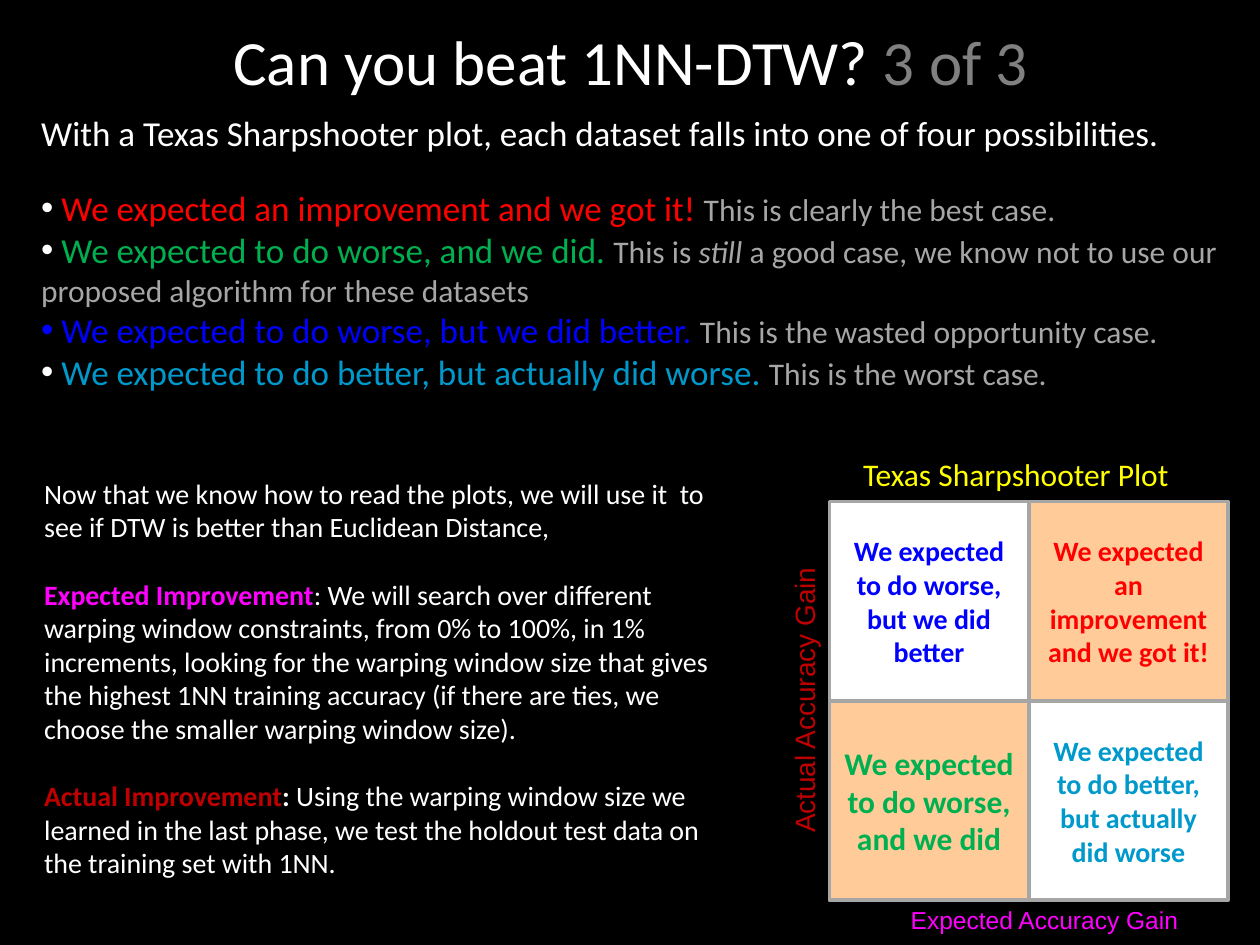
import pptx
import pptx.util
import pptx.dml.color
import pptx.enum.shapes
import pptx.enum.text
import pptx.oxml.ns
from lxml import etree

Cm = pptx.util.Cm
Pt = pptx.util.Pt
ALIGN = pptx.enum.text.PP_ALIGN
ANCHOR = pptx.enum.text.MSO_ANCHOR

WHITE, GRAY, RED, GREEN = "FFFFFF", "A6A6A6", "FF0000", "00B050"
BLUE, TEAL, MAGENTA, DARK_RED = "0000FF", "0099CC", "FF00FF", "C00000"
PEACH = "FFCC99"


def rgb(value):
    return pptx.dml.color.RGBColor.from_string(value)


def add_span(para, text, size=16, color=WHITE, font="Calibri", bold=False, italic=False):
    span = para.add_run()
    span.text = text
    span.font.size = Pt(size)
    span.font.name = font
    span.font.bold = bold
    span.font.italic = italic
    span.font.color.rgb = rgb(color)


def add_bullet(para):
    properties = para._p.get_or_add_pPr()
    properties.set("marL", "0")
    properties.set("indent", "0")
    font = etree.SubElement(properties, pptx.oxml.ns.qn("a:buFont"))
    font.set("typeface", "Arial")
    etree.SubElement(properties, pptx.oxml.ns.qn("a:buChar")).set("char", "•")


class SlideBuilder:
    """Holds the current page and the shared style of its elements."""

    border_color = GRAY
    border_width = Pt(2)

    def __init__(self, deck):
        self.page = deck.slides.add_slide(deck.slide_layouts[5])
        fill = self.page.background.fill
        fill.solid()
        fill.fore_color.rgb = rgb("000000")

    def title(self, spans, left, top, width, height):
        box = self.page.shapes.title
        box.left, box.top, box.width, box.height = map(Cm, (left, top, width, height))
        frame = box.text_frame
        frame.vertical_anchor = ANCHOR.MIDDLE
        para = frame.paragraphs[0]
        para.alignment = ALIGN.CENTER
        for text, color in spans:
            add_span(para, text, size=36, color=color)

    def text(self, paragraphs, left, top, width, height):
        """Each paragraph is (space before, has bullet, spans)."""
        box = self.page.shapes.add_textbox(*map(Cm, (left, top, width, height)))
        frame = box.text_frame
        frame.word_wrap = True
        for index, (gap, bullet, spans) in enumerate(paragraphs):
            para = frame.add_paragraph() if index else frame.paragraphs[0]
            para.space_before = Pt(gap)
            if bullet:
                add_bullet(para)
            for text, style in spans:
                add_span(para, text, **style)

    def label(self, text, left, top, width, height, inset=0, rotation=0, **style):
        box = self.page.shapes.add_textbox(*map(Cm, (left, top, width, height)))
        box.rotation = rotation
        frame = box.text_frame
        frame.word_wrap = False
        frame.margin_left = frame.margin_right = Cm(inset)
        frame.margin_top = frame.margin_bottom = Cm(inset / 2)
        add_span(frame.paragraphs[0], text, **style)

    def square(self, left, top, side, fill=None):
        box = self.page.shapes.add_shape(
            pptx.enum.shapes.MSO_SHAPE.RECTANGLE, *map(Cm, (left, top, side, side)))
        box.shadow.inherit = False
        box.line.fill.background()
        if fill:
            box.fill.solid()
            box.fill.fore_color.rgb = rgb(fill)
        else:
            box.fill.background()
        return box

    def cell(self, text, left, top, side, fill, **style):
        box = self.square(left, top, side, fill)
        box.line.color.rgb = rgb(self.border_color)
        box.line.width = self.border_width
        frame = box.text_frame
        frame.word_wrap = True
        frame.vertical_anchor = ANCHOR.MIDDLE
        para = frame.paragraphs[0]
        para.alignment = ALIGN.CENTER
        add_span(para, text, bold=True, **style)


def main():
    deck = pptx.Presentation()
    deck.slide_width, deck.slide_height = Cm(25.4), Cm(19.05)
    builder = SlideBuilder(deck)

    # Title
    builder.title([("Can you beat 1NN-DTW? ", WHITE), ("3 of 3", "808080")],
                  0.43, 0, 24.56, 2.44)

    # White ground of the plot
    left, top, side = 16.72, 10.11, 4.02
    builder.square(left, top, 2 * side, WHITE)

    # The four possibilities
    large, remark = {"size": 20}, {"size": 18, "color": GRAY}
    cases = [
        (WHITE, RED, "We expected an improvement and we got it! ",
         [("This is clearly the best case.", remark)]),
        (WHITE, GREEN, "We expected to do worse, and we did. ",
         [("This is ", remark), ("still", {**remark, "italic": True}),
          (" a good case, we know not to use our proposed algorithm for these datasets",
           remark)]),
        (BLUE, BLUE, "We expected to do worse, but we did better. ",
         [("This is the wasted opportunity case.", remark)]),
        (WHITE, TEAL, "We expected to do better, but actually did worse. ",
         [("This is the worst case.", remark)]),
    ]
    paragraphs = [(0, False, [(
        "With a Texas Sharpshooter plot, each dataset falls into one of four possibilities.",
        large)])]
    for index, (bullet_color, color, outcome, remarks) in enumerate(cases):
        spans = [(" ", {"size": 20, "color": bullet_color}),
                 (outcome, {"size": 20, "color": color})]
        paragraphs.append((0 if index else 19.2, True, spans + remarks))
    builder.text(paragraphs, 0.58, 2.12, 24.82, 8.71)

    # Sharpshooter plot: two by two cells
    cells = [
        ("We expected to do worse, but we did better", None, BLUE, 16),
        ("We expected an improvement and we got it!", PEACH, RED, 16),
        ("We expected to do worse, and we did", PEACH, GREEN, 18),
        ("We expected to do better, but actually did worse", None, TEAL, 16),
    ]
    for index, (text, fill, color, size) in enumerate(cells):
        row, column = divmod(index, 2)
        builder.cell(text, left + column * side, top + row * side, side, fill,
                     color=color, size=size)

    # Reading of the two axes
    builder.text([
        (0, False, [("Now that we know how to read the plots, we will use it  to see if "
                     "DTW is better than Euclidean Distance,", {})]),
        (19.2, False, [
            ("Expected Improvement", {"color": MAGENTA, "bold": True}),
            (": We will search over different warping window constraints, from 0% to 100%, "
             "in 1% increments, looking for the warping window size that gives the highest "
             "1NN training accuracy (if there are ties, we choose the smaller warping "
             "window size).", {})]),
        (19.2, False, [
            ("Actual Improvement", {"color": DARK_RED, "bold": True}),
            (": ", {"bold": True}),
            ("Using the warping window size we learned in the last phase, we test the "
             "holdout test data on the training set with 1NN.", {})]),
    ], 0.64, 9.48, 14.6, 8.46)

    # Plot title and axis labels
    builder.label("Texas Sharpshooter Plot", 17.15, 9.04, 6.73, 1.02, inset=0.25,
                  size=18, color="FFFF00")
    builder.label("Expected Accuracy Gain", 18.36, 18.24, 5.41, 0.61,
                  size=14, color=MAGENTA, font="Arial")
    builder.label("Actual Accuracy Gain", 13.51, 13.74, 5.41, 0.69, rotation=270,
                  size=16, color=DARK_RED, font="Arial")

    deck.save("out.pptx")


if __name__ == "__main__":
    main()
